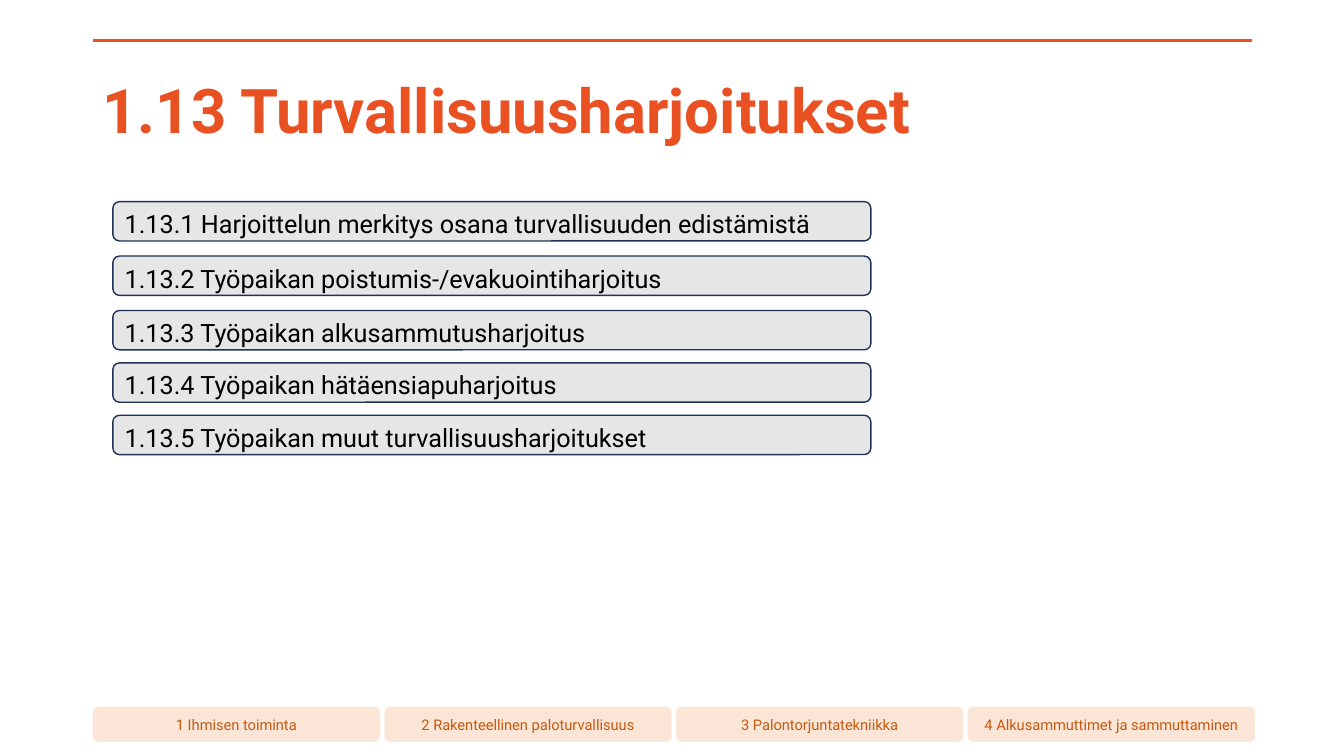
from itertools import accumulate

from lxml import etree
from pptx import Presentation
from pptx.dml.color import RGBColor
from pptx.enum.shapes import MSO_CONNECTOR, MSO_SHAPE
from pptx.enum.text import MSO_ANCHOR, PP_ALIGN
from pptx.oxml.ns import qn
from pptx.util import Inches, Pt

ORANGE = RGBColor(0xE9, 0x51, 0x23)
RUST = RGBColor(0xC5, 0x5A, 0x11)
PEACH = RGBColor(0xFB, 0xE5, 0xD6)
GREY = RGBColor(0xE7, 0xE6, 0xE6)
NAVY = RGBColor(0x1E, 0x32, 0x56)
BLACK = RGBColor(0x00, 0x00, 0x00)

STRAIGHT = MSO_CONNECTOR.STRAIGHT
ROUNDED = MSO_SHAPE.ROUNDED_RECTANGLE
TOP, MIDDLE = MSO_ANCHOR.TOP, MSO_ANCHOR.MIDDLE
LEFT, CENTER = PP_ALIGN.LEFT, PP_ALIGN.CENTER

TITLE = "1.13 Turvallisuusharjoitukset"
TOPICS = [
    "1.13.1 Harjoittelun merkitys osana turvallisuuden edistämistä",
    "1.13.2 Työpaikan poistumis-/evakuointiharjoitus",
    "1.13.3 Työpaikan alkusammutusharjoitus",
    "1.13.4 Työpaikan hätäensiapuharjoitus",
    "1.13.5 Työpaikan muut turvallisuusharjoitukset",
]
CHAPTERS = [
    "1 Ihmisen toiminta",
    "2 Rakenteellinen paloturvallisuus",
    "3 Palontorjuntatekniikka",
    "4 Alkusammuttimet ja sammuttaminen",
]

# Positions are percentages of the slide's width and height.
MARGIN, CONTENT_WIDTH, RULE_TOP = 6.9, 86.25, 5.33
TOPIC_TOPS = accumulate([26.67, 7.2, 7.2, 6.93, 6.93])
CHAPTER_PITCH = 21.7


class SlidePainter:
    font = "Roboto"

    def __init__(self, deck):
        self.deck = deck
        self.slide = deck.slides.add_slide(deck.slide_layouts[6])

    def place(self, left, top, width, height):
        """Turn percentages of the slide into lengths."""
        across, down = self.deck.slide_width / 100, self.deck.slide_height / 100
        return (round(left * across), round(top * down),
                round(width * across), round(height * down))

    def set_text(self, shape, text, size, color, align=LEFT, anchor=MIDDLE, bold=False):
        frame = shape.text_frame
        frame.text = text
        frame.word_wrap = True
        frame.vertical_anchor = anchor
        para = frame.paragraphs[0]
        para.alignment = align
        font = para.runs[0].font
        font.name, font.size, font.bold = self.font, Pt(size), bold
        font.color.rgb = color
        return para

    def title(self, area, text):
        box = self.slide.shapes.add_textbox(*self.place(*area))
        self.set_text(box, text, 44, ORANGE, bold=True).line_spacing = 0.9

    def rule(self, left, top, width):
        x, y, length, _ = self.place(left, top, width, 0)
        line = self.slide.shapes.add_connector(STRAIGHT, x, y, x + length, y)
        line.line.color.rgb = ORANGE
        line.line.width = Pt(2.5)
        etree.SubElement(line._element.spPr, qn("a:effectLst"))

    def rounded_box(self, area, fill, outline=None):
        box = self.slide.shapes.add_shape(ROUNDED, *self.place(*area))
        box.shadow.inherit = False
        box.fill.solid()
        box.fill.fore_color.rgb = fill
        if outline is None:
            box.line.fill.background()
        else:
            box.line.color.rgb = outline
            box.line.width = Pt(1)
        return box

    def topic(self, top, text):
        box = self.rounded_box((8.4, top, 56.4, 5.2), GREY, NAVY)
        self.set_text(box, text, 18, BLACK, anchor=TOP)

    def chapter(self, left, text):
        box = self.rounded_box((left, 93.47, 21.38, 4.67), PEACH)
        self.set_text(box, text, 10.5, RUST, CENTER)


def main():
    deck = Presentation()
    deck.slide_width, deck.slide_height = Inches(13.33), Inches(7.5)
    painter = SlidePainter(deck)
    painter.rule(MARGIN, RULE_TOP, CONTENT_WIDTH)
    for index, chapter in enumerate(CHAPTERS):
        painter.chapter(MARGIN + index * CHAPTER_PITCH, chapter)
    painter.title((MARGIN, RULE_TOP, CONTENT_WIDTH, 19.33), TITLE)
    for top, topic in zip(TOPIC_TOPS, TOPICS):
        painter.topic(top, topic)
    deck.save("out.pptx")


if __name__ == "__main__":
    main()
